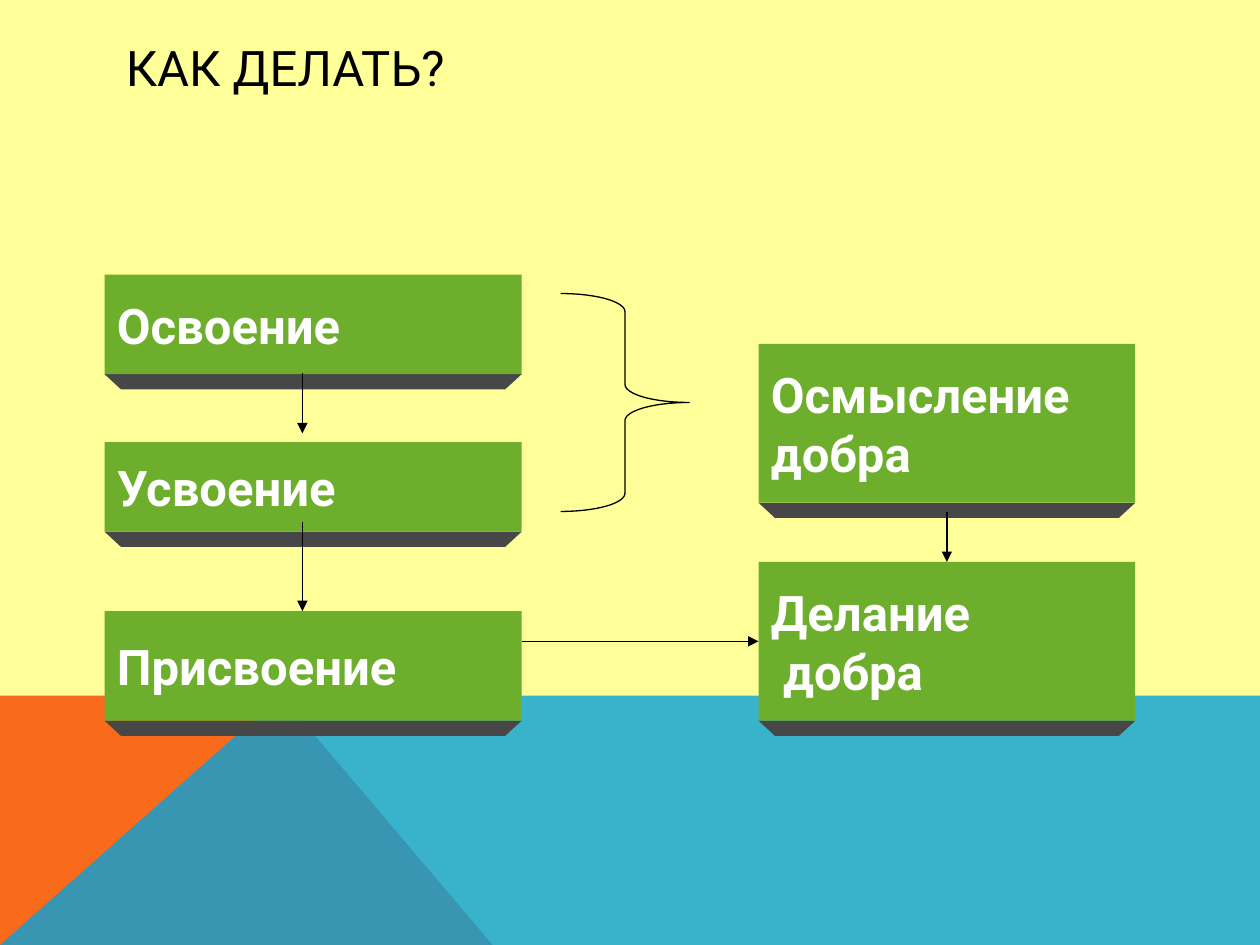
from collections import namedtuple
from dataclasses import dataclass

from lxml.etree import SubElement
from pptx import Presentation
from pptx.dml.color import RGBColor as Rgb
from pptx.enum.shapes import MSO_CONNECTOR as Link, MSO_SHAPE as Kind
from pptx.enum.text import MSO_ANCHOR as Anchor, PP_ALIGN as Align
from pptx.oxml.ns import qn
from pptx.util import Inches, Pt

# The slide is a grid of 100 columns by 75 rows, each a tenth of an inch.
COLS, ROWS = 100, 75
Box = namedtuple("Box", "x y w h")


@dataclass(frozen=True)
class Theme:
    font: str = "Roboto"
    size: int = 28
    line: float = 0.75
    back: str = "FFFF99"
    ink: str = "000000"
    text: str = "FFFFFF"
    face: str = "6DAE2D"
    lip: str = "474747"
    warm: str = "F96A1B"
    cool: str = "08A1D9"


LOOK = Theme()


def unit(n):
    return Inches(n / 10)


def span(box):
    return [unit(n) for n in box]


def paint(fill, tone):
    fill.solid()
    fill.fore_color.rgb = Rgb.from_string(tone)


def stroke(shape):
    paint(shape.line.fill, LOOK.ink)
    shape.line.width = Pt(LOOK.line)


def area(slide, dots, tone):
    """Draw a closed, unlined outline through grid points."""
    first, *rest = [(unit(x), unit(y)) for x, y in dots]
    pen = slide.shapes.build_freeform(*first)
    pen.add_line_segments(rest, close=True)
    shape = pen.convert_to_shape()
    shape.shadow.inherit = False
    paint(shape.fill, tone)
    shape.line.fill.background()
    return shape


def write(shape, lines, tone, bold, wrap):
    frame = shape.text_frame
    form = {"word_wrap": wrap, "vertical_anchor": Anchor.MIDDLE}
    for key, val in form.items():
        setattr(frame, key, val)
    frame.text = "\n".join(lines)
    style = {"name": LOOK.font, "size": Pt(LOOK.size), "bold": bold}
    for para in frame.paragraphs:
        para.alignment = Align.LEFT
        for run in para.runs:
            for key, val in style.items():
                setattr(run.font, key, val)
            run.font.color.rgb = Rgb.from_string(tone)


def block(slide, box, *lines):
    """Draw a labelled block with a dark slanted lip under it."""
    deep, slant = 1.2, 1.3
    end, base = box.x + box.w, box.y + box.h
    area(slide, [(box.x, base), (end, base), (end - slant, base + deep),
                 (box.x + slant, base + deep)], LOOK.lip)
    shape = slide.shapes.add_shape(Kind.RECTANGLE, *span(box))
    shape.shadow.inherit = False
    paint(shape.fill, LOOK.face)
    shape.line.fill.background()
    write(shape, lines, LOOK.text, True, False)
    return shape


def arrow(slide, x, y, to_x, to_y):
    line = slide.shapes.add_connector(
        Link.STRAIGHT, *span((x, y, to_x, to_y)))
    stroke(line)
    props = line.line._get_or_add_ln()
    SubElement(props, qn("a:tailEnd"), type="triangle")
    SubElement(line._element.spPr, qn("a:effectLst"))
    return line


def backdrop(slide, box):
    paint(slide.background.fill, LOOK.back)
    end, base = box.x + box.w, box.y + box.h
    peak = (box.x + 0.223 * box.w, box.y)
    area(slide, [(box.x, base), (box.x, box.y), peak,
                 (box.x + 0.391 * box.w, base)], LOOK.warm)
    cool = area(slide, [(box.x, base), peak, (end, box.y), (end, base)],
                LOOK.cool)
    tone = cool._element.spPr.find(qn("a:solidFill"))[0]
    SubElement(tone, qn("a:alpha"), val="80000")


def title(slide, box):
    shape = slide.shapes.add_textbox(*span(box))
    write(shape, ["КАК ДЕЛАТЬ?"], LOOK.ink, False, True)


def chain(slide, box):
    """Stack the three steps on the left."""
    steps = [("Освоение", 0, 7.9), ("Усвоение", 13.3, 7.1),
             ("Присвоение", 26.7, 8.7)]
    for name, drop, high in steps:
        block(slide, Box(box.x, box.y + drop, box.w, high), name)
    mid = box.x + 15.7
    for start, stop in ((7.8, 12.6), (19.6, 26.7)):
        arrow(slide, mid, box.y + start, mid, box.y + stop)


def brace(slide, box):
    shape = slide.shapes.add_shape(Kind.RIGHT_BRACE, *span(box))
    shape.shadow.inherit = False
    shape.fill.background()
    stroke(shape)
    shape.adjustments[0] = 0.141
    shape.adjustments[1] = 0.5


def result(slide, box):
    """Stack the two outcomes on the right."""
    high, step = 12.6, 17.3
    block(slide, Box(box.x, box.y, box.w, high), "Осмысление", "добра")
    goal = block(slide, Box(box.x, box.y + step, box.w, high),
                 "Делание", " добра")
    mid = box.x + box.w / 2
    line = arrow(slide, mid, box.y + 13.3, mid, box.y + step)
    line.end_connect(goal, 0)


def main():
    deck = Presentation()
    deck.slide_width, deck.slide_height = unit(COLS), unit(ROWS)
    slide = deck.slides.add_slide(deck.slide_layouts[6])
    left = Box(8.3, 21.8, 33.1, 35.4)
    right = Box(60.2, 27.3, 29.9, 29.9)
    backdrop(slide, Box(0, 55.2, COLS, ROWS - 55.2))
    title(slide, Box(9, 2.6, 82.2, 5.4))
    chain(slide, left)
    brace(slide, Box(44.5, 23.3, 10.2, 17.3))
    result(slide, right)
    arrow(slide, left.x + left.w, 50.9, right.x, 50.9)
    deck.save("out.pptx")


if __name__ == "__main__":
    main()
